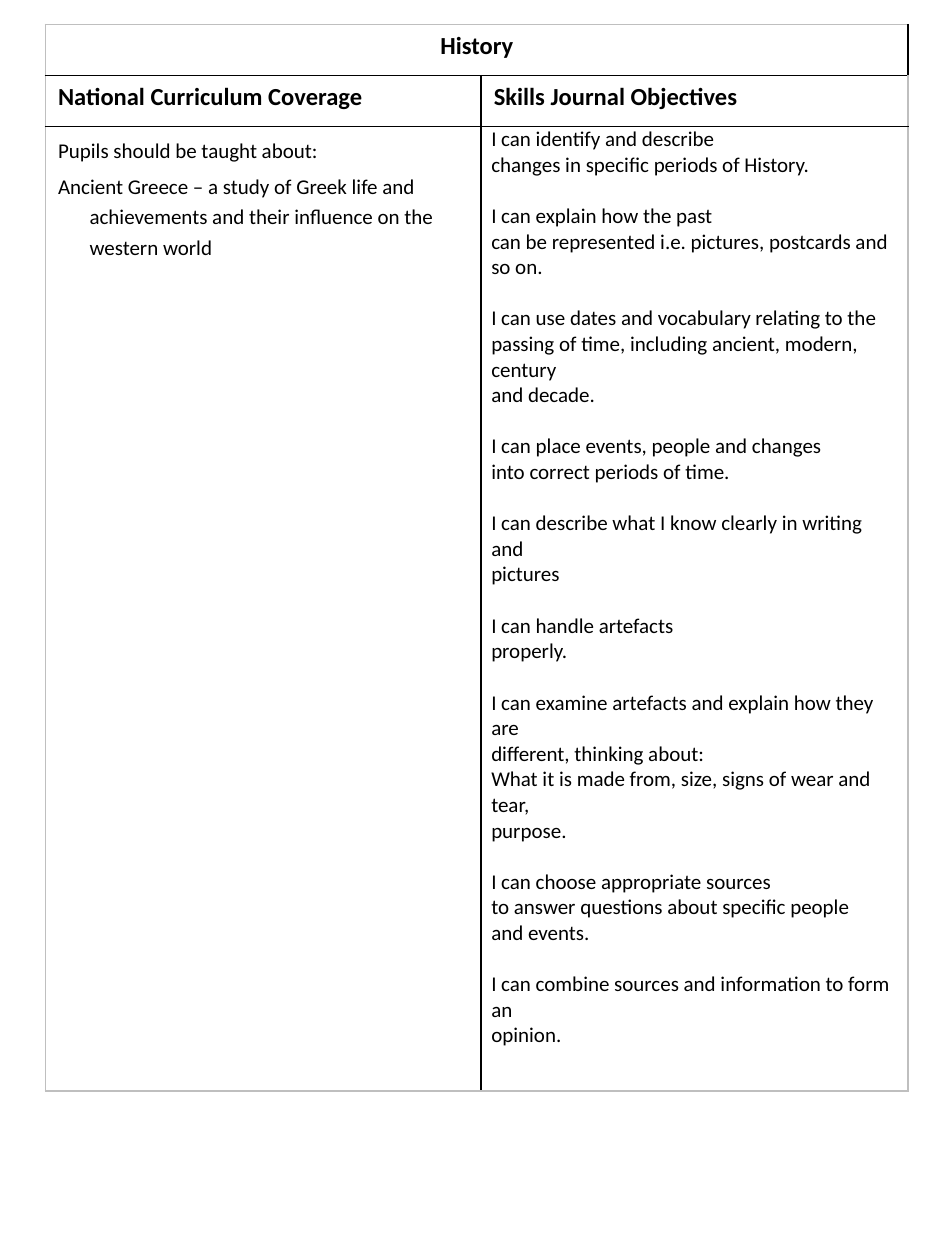
from lxml import etree
from pptx import Presentation
from pptx.dml.color import RGBColor
from pptx.enum.text import PP_ALIGN
from pptx.oxml.ns import qn
from pptx.util import Pt

CENTER = PP_ALIGN.CENTER
LEFT = PP_ALIGN.LEFT
HUES = {"ink": "000000", "edge": "BFBFBF", "page": "FFFFFF"}
FONT = "Calibri"
COLS = (249, 244)
ROWS = (29.2, 29.2, 551)

COVERAGE = [
    "Pupils should be taught about:",
    "Ancient Greece – a study of Greek life and achievements and their "
    "influence on the western world",
]
GOALS = [
    ["I can identify and describe",
     "changes in specific periods of History."],
    ["I can explain how the past",
     "can be represented i.e. pictures, postcards and",
     "so on."],
    ["I can use dates and vocabulary relating to the",
     "passing of time, including ancient, modern, century",
     "and decade."],
    ["I can place events, people and changes",
     "into correct periods of time."],
    ["I can describe what I know clearly in writing and",
     "pictures"],
    ["I can handle artefacts",
     "properly."],
    ["I can examine artefacts and explain how they are",
     "different, thinking about:",
     "What it is made from, size, signs of wear and tear,",
     "purpose."],
    ["I can choose appropriate sources",
     "to answer questions about specific people",
     "and events."],
    ["I can combine sources and information to form an",
     "opinion."],
]


def write(cell, lines, size=12, bold=False, align=LEFT):
    """Fill a cell with one paragraph per line and return the paragraphs."""
    frame = cell.text_frame
    frame.text = "\n".join(lines)
    for para in frame.paragraphs:
        para.alignment = align
        font = para.font
        font.name, font.size, font.bold = FONT, Pt(size), bold
        font.color.rgb = RGBColor.from_string(HUES["ink"])
    return frame.paragraphs


def rule(cell, side, hue):
    """Draw one border of a cell."""
    line = etree.SubElement(cell._tc.get_or_add_tcPr(), qn(f"a:ln{side}"),
                            w=str(Pt(1)))
    fill = etree.SubElement(line, qn("a:solidFill"))
    etree.SubElement(fill, qn("a:srgbClr"), val=HUES[hue])


def frame_cells(table):
    """Rule the grid in ink with a pale outer edge, on a plain fill."""
    last_row, last_col = len(ROWS) - 1, len(COLS) - 1
    for r in range(len(ROWS)):
        for c in range(len(COLS)):
            cell = table.cell(r, c)
            outer = {"L": c == 0, "R": c == last_col,
                     "T": r == 0, "B": r == last_row}
            for side, edge in outer.items():
                rule(cell, side, "edge" if edge else "ink")
            cell.fill.solid()
            cell.fill.fore_color.rgb = RGBColor.from_string(HUES["page"])


def add_heads(table):
    """Write the subject title and the two column heads."""
    table.cell(0, 0).merge(table.cell(0, 1))
    write(table.cell(0, 0), ["History"], 14, True, CENTER)
    heads = "National Curriculum Coverage", "Skills Journal Objectives"
    for c, head in enumerate(heads):
        write(table.cell(1, c), [head], 14, True)


def add_coverage(cell):
    """Write the curriculum notes with hanging indents."""
    for para in write(cell, COVERAGE):
        para.line_spacing = 1.2
        para.space_after = Pt(3)
        props = para._p.get_or_add_pPr()
        props.set("marL", str(Pt(18)))
        props.set("indent", str(-Pt(18)))


def add_goals(cell):
    """Write the objectives, one line's gap between groups."""
    cell.margin_left = cell.margin_right = Pt(5.75)
    cell.margin_top = cell.margin_bottom = 0
    paras = write(cell, [line for goal in GOALS for line in goal])
    start = 0
    for goal in GOALS[:-1]:
        start += len(goal)
        paras[start].space_before = Pt(14.65)


def add_plan(slide, left, top):
    """Place the history plan table."""
    table = slide.shapes.add_table(
        len(ROWS), len(COLS), Pt(left), Pt(top),
        Pt(sum(COLS)), Pt(sum(ROWS))).table
    table.first_row = table.horz_banding = False
    for col, width in zip(table.columns, COLS):
        col.width = Pt(width)
    for row, height in zip(table.rows, ROWS):
        row.height = Pt(height)
    frame_cells(table)
    add_heads(table)
    add_coverage(table.cell(2, 0))
    add_goals(table.cell(2, 1))


def main():
    """Build and save the slide."""
    deck = Presentation()
    deck.slide_width, deck.slide_height = Pt(540), Pt(720)
    slide = deck.slides.add_slide(deck.slide_layouts[6])
    add_plan(slide, 26, 14)
    deck.save("out.pptx")


if __name__ == "__main__":
    main()
